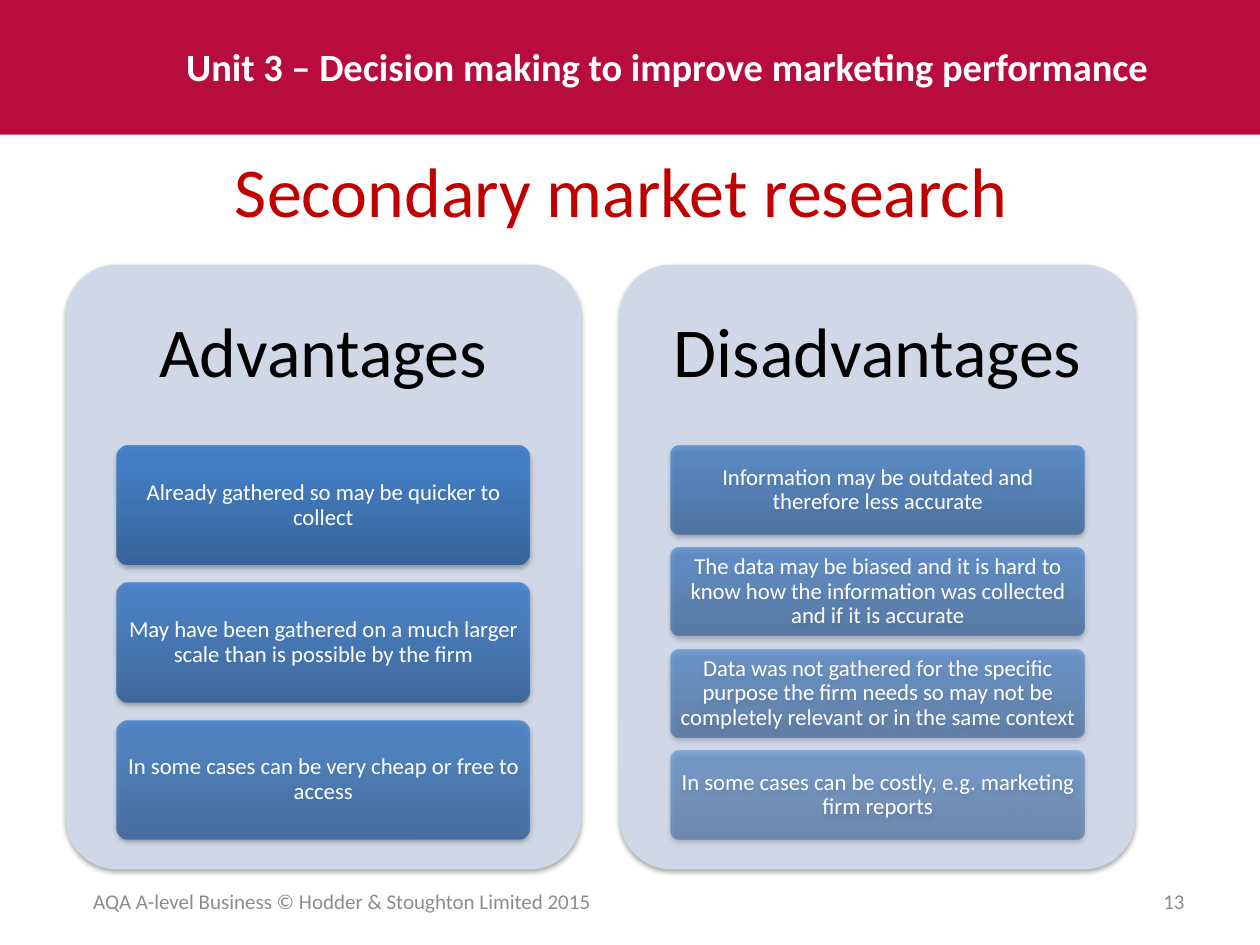
import pptx
import pptx.dml.color
import pptx.enum.shapes
import pptx.enum.text
import pptx.oxml
import pptx.oxml.ns
import pptx.util

Inches = pptx.util.Inches
Align = pptx.enum.text.PP_ALIGN
Anchor = pptx.enum.text.MSO_ANCHOR
Preset = pptx.enum.shapes.MSO_SHAPE

NAMESPACE = pptx.oxml.ns.nsdecls("a")
PANEL_TOP, PANEL_WIDTH, PANEL_HEIGHT = 2.1, 4.09, 4.8
CARD_TOP, CARD_WIDTH, CARDS_HEIGHT = 3.54, 3.28, 3.12
GAP_SHARE = 2 / 13
CARD_GRADIENT = [(0, "2F5F99"), (80, "3D7CC7"), (100, "3A7CCB")]

COLUMNS = [
    (0.52, "Advantages", [
        "Already gathered so may be quicker to collect",
        "May have been gathered on a much larger scale than is possible by the firm",
        "In some cases can be very cheap or free to access",
    ]),
    (4.92, "Disadvantages", [
        "Information may be outdated and therefore less accurate",
        "The data may be biased and it is hard to know how the information was collected "
        "and if it is accurate",
        "Data was not gathered for the specific purpose the firm needs so may not be "
        "completely relevant or in the same context",
        "In some cases can be costly, e.g. marketing firm reports",
    ]),
]


def rgb(value):
    return pptx.dml.color.RGBColor.from_string(value)


def write(holder, text, size, color, bold=False, align=Align.CENTER,
          anchor=Anchor.MIDDLE, spacing=None, margins=(0.1, 0.05)):
    frame = holder.text_frame
    frame.word_wrap = True
    frame.auto_size = pptx.enum.text.MSO_AUTO_SIZE.NONE
    frame.vertical_anchor = anchor
    frame.margin_left = frame.margin_right = Inches(margins[0])
    frame.margin_top = frame.margin_bottom = Inches(margins[1])
    paragraph = frame.paragraphs[0]
    paragraph.alignment = align
    if spacing:
        paragraph.line_spacing = spacing
    run = paragraph.add_run()
    run.text = text
    run.font.name = "Calibri"
    run.font.size = pptx.util.Pt(size)
    run.font.bold = bold
    run.font.color.rgb = rgb(color)


def add_label(slide, left, top, width, height, text, **style):
    label = slide.shapes.add_textbox(Inches(left), Inches(top), Inches(width), Inches(height))
    write(label, text, **style)


def add_block(slide, preset, left, top, width, height, fill=None):
    block = slide.shapes.add_shape(
        preset, Inches(left), Inches(top), Inches(width), Inches(height))
    block.shadow.inherit = False
    block.line.fill.background()
    if fill:
        block.fill.solid()
        block.fill.fore_color.rgb = rgb(fill)
    return block


def add_rounded(slide, *box, fill=None):
    rounded = add_block(slide, Preset.ROUNDED_RECTANGLE, *box, fill=fill)
    rounded.adjustments[0] = 0.1
    effects = rounded.element.spPr.find(pptx.oxml.ns.qn("a:effectLst"))
    effects.append(pptx.oxml.parse_xml(
        f'<a:outerShdw {NAMESPACE} blurRad="{pptx.util.Pt(3.1)}" dist="{pptx.util.Pt(1.8)}" '
        'dir="5400000" rotWithShape="0"><a:srgbClr val="000000">'
        '<a:alpha val="35000"/></a:srgbClr></a:outerShdw>'))
    return rounded


def fill_gradient(card, opacity):
    card.fill.gradient()
    card.fill.gradient_angle = 90
    stops = card.element.spPr.find(".//" + pptx.oxml.ns.qn("a:gsLst"))
    for stop in list(stops):
        stops.remove(stop)
    for position, color in CARD_GRADIENT:
        stops.append(pptx.oxml.parse_xml(
            f'<a:gs {NAMESPACE} pos="{position * 1000}"><a:srgbClr val="{color}">'
            f'<a:alpha val="{round(opacity * 1000)}"/></a:srgbClr></a:gs>'))


def add_column(slide, left, heading, points, first_card, last_card):
    add_rounded(slide, left, PANEL_TOP, PANEL_WIDTH, PANEL_HEIGHT, fill="D0D8E8")
    add_label(slide, left, PANEL_TOP, PANEL_WIDTH, CARD_TOP - PANEL_TOP, heading,
              size=40, color="000000", spacing=0.9, margins=(0.17, 0.17))
    count = len(points)
    height = CARDS_HEIGHT / (count + (count - 1) * GAP_SHARE)
    card_left = left + (PANEL_WIDTH - CARD_WIDTH) / 2
    for row, point in enumerate(points):
        top = CARD_TOP + row * height * (1 + GAP_SHARE)
        card = add_rounded(slide, card_left, top, CARD_WIDTH, height)
        fill_gradient(card, 90 - 40 * (first_card + row) / last_card)
        write(card, point, size=13, color="FFFFFF", spacing=0.9, margins=(0.03, 0.03))


def main():
    deck = pptx.Presentation()
    deck.slide_width, deck.slide_height = Inches(10), Inches(7.5)
    slide = deck.slides.add_slide(deck.slide_layouts[5])

    add_block(slide, Preset.RECTANGLE, 0, 0, 10, 1.07, fill="B70C3C")
    add_label(slide, 1.38, 0.29, 8.03, 0.47,
              "Unit 3 – Decision making to improve marketing performance",
              size=22, color="FFFFFF", bold=True, align=Align.LEFT, anchor=Anchor.TOP)

    title = slide.shapes.title
    title.left, title.top = Inches(0.43), Inches(1.07)
    title.width, title.height = Inches(9), Inches(0.87)
    write(title, "Secondary market research", size=40, color="C00000")

    last_card = sum(len(points) for _, _, points in COLUMNS) - 1
    first_card = 0
    for left, heading, points in COLUMNS:
        add_column(slide, left, heading, points, first_card, last_card)
        first_card += len(points)

    add_label(slide, 0.51, 6.95, 4.41, 0.4,
              "AQA A-level Business © Hodder & Stoughton Limited 2015",
              size=12, color="8C8C8C")
    add_label(slide, 7.17, 6.95, 2.33, 0.4, "13",
              size=12, color="8C8C8C", align=Align.RIGHT)
    deck.save("out.pptx")


if __name__ == "__main__":
    main()
